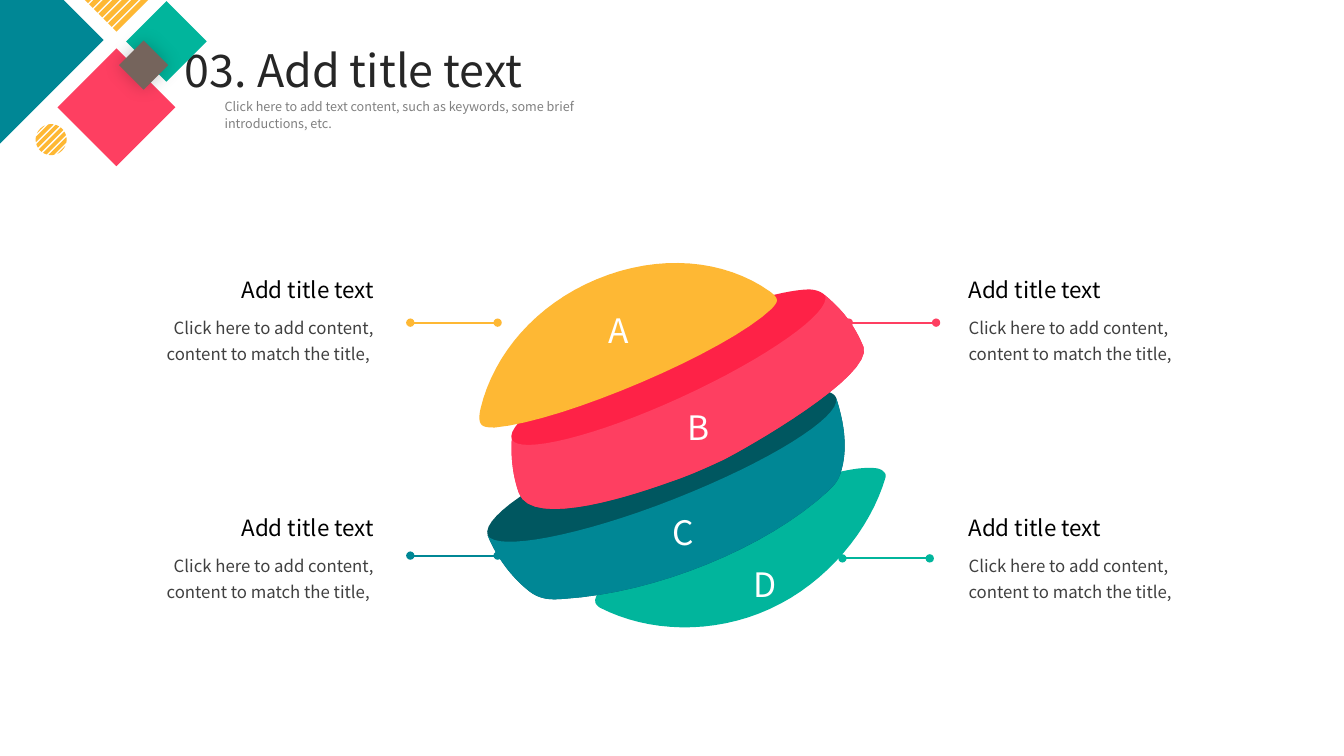
from math import sqrt

from lxml.etree import SubElement
from pptx import Presentation
from pptx.dml.color import RGBColor
from pptx.enum.shapes import MSO_CONNECTOR as Connector, MSO_SHAPE as Shape
from pptx.enum.text import MSO_ANCHOR as Anchor, MSO_AUTO_SIZE as AutoSize, PP_ALIGN as Align
from pptx.oxml.ns import qn
from pptx.util import Cm, Pt

FONT = "Noto Sans CJK SC"
COLORS = {
    "yellow": "FEB834", "pink": "FE3F61", "red": "FE2247", "teal": "008795",
    "deep_teal": "005760", "green": "01B59C", "brown": "75645C", "white": "FFFFFF",
    "black": "000000", "heading": "262626", "body": "404040", "muted": "808080",
}

# Globe outlines on a grid 406 units wide: each curve is two handles and an end point
GLOBE_UNITS = 406
CAP_START = (119, 26)
CAP = [
    ((59, 51), (17, 100), (4, 154)), ((0, 172), (6, 173), (18, 173)),
    ((86, 167), (248, 98), (293, 55)), ((298, 49), (302, 46), (291, 38)),
    ((246, 6), (181, 0), (119, 26)),
]
UPPER_START = (35, 185)
UPPER_WALL = [
    ((34, 203), (36, 221), (42, 238)), ((55, 275), (164, 237), (192, 227)),
    ((210, 221), (228, 213), (245, 205)), ((267, 194), (394, 122), (384, 93)),
    ((375, 72), (365, 58), (346, 42)),
]
UPPER_FRONT = [((352, 59), (288, 104), (203, 143)), ((118, 182), (43, 200), (35, 185))]
UPPER_BACK = [
    ((342, 38), (336, 36), (329, 36)), ((301, 37), (242, 54), (178, 84)),
    ((92, 123), (28, 168), (35, 185)),
]
LOWER_START = (11, 280)
LOWER_WALL = [
    ((20, 302), (35, 322), (53, 336)), ((64, 344), (74, 344), (87, 343)),
    ((178, 337), (287, 293), (349, 236)), ((355, 230), (358, 227), (361, 219)),
    ((369, 195), (365, 169), (357, 144)),
]
LOWER_FRONT = [((361, 163), (290, 207), (196, 244)), ((102, 281), (20, 296), (11, 280))]
LOWER_BACK = [
    ((355, 138), (345, 135), (330, 135)), ((297, 137), (237, 152), (172, 178)),
    ((76, 215), (4, 260), (11, 280)),
]
BOWL_START = (389, 213)
BOWL = [
    ((363, 213), (309, 230), (250, 256)), ((171, 292), (112, 333), (118, 347)),
    ((119, 349), (121, 351), (123, 352)), ((170, 376), (234, 379), (291, 353)),
    ((348, 327), (391, 274), (406, 222)), ((406, 220), (406, 219), (405, 218)),
    ((402, 214), (398, 213), (389, 213)),
]
SLICES = [
    (BOWL_START, BOWL, "green"),
    (LOWER_START, LOWER_WALL + LOWER_BACK, "deep_teal"),
    (LOWER_START, LOWER_WALL + LOWER_FRONT, "teal"),
    (UPPER_START, UPPER_WALL + UPPER_BACK, "red"),
    (UPPER_START, UPPER_WALL + UPPER_FRONT, "pink"),
    (CAP_START, CAP, "yellow"),
]
LETTERS = [("A", 141, 76), ("B", 220, 173), ("C", 205, 277), ("D", 286, 328)]


def rgb(color):
    return RGBColor.from_string(COLORS[color])


def paint(part, color):
    part.shadow.inherit = False
    part.fill.solid()
    part.fill.fore_color.rgb = rgb(color)
    part.line.fill.background()


def write(holder, text, size, color, align=Align.LEFT, spacing=None, wrap=True, anchor=Anchor.TOP):
    frame = holder.text_frame
    frame.word_wrap = wrap
    frame.auto_size = AutoSize.NONE
    frame.vertical_anchor = anchor
    paragraph = frame.paragraphs[0]
    paragraph.alignment = align
    if spacing:
        paragraph.line_spacing = spacing
    run = paragraph.add_run()
    run.text = text
    run.font.name = FONT
    run.font.size = Pt(size)
    run.font.color.rgb = rgb(color)


def sample(start, curves, steps=16):
    """Points along a chain of cubic curves."""
    points = [start]
    for first, second, end in curves:
        origin = points[-1]
        for step in range(1, steps + 1):
            t = step / steps
            s = 1 - t
            points.append(tuple(
                s**3 * a + 3 * s * s * t * b + 3 * s * t * t * c + t**3 * d
                for a, b, c, d in zip(origin, first, second, end)))
    return points


def add_outline(slide, contours, color):
    builder = slide.shapes.build_freeform(*contours[0][0])
    for number, contour in enumerate(contours):
        if number:
            builder.move_to(*contour[0])
        builder.add_line_segments(contour[1:], close=True)
    paint(builder.convert_to_shape(), color)


def add_striped_dot(slide, center_x, center_y, radius):
    pitch, half_width, steps = Cm(0.137), Cm(0.047), 6
    contours = []
    for index in range(-3, 4):
        near = max(index * pitch - half_width, -radius)
        far = min(index * pitch + half_width, radius)
        across = [near + (far - near) * step / steps for step in range(steps + 1)]
        edge = [(u, sqrt(max(radius**2 - u**2, 0))) for u in across]
        edge += [(u, -v) for u, v in reversed(edge)]
        contours.append([(center_x + (u + v) / sqrt(2), center_y + (u - v) / sqrt(2))
                         for u, v in edge])
    add_outline(slide, contours, "yellow")


def add_corner(slide, left, top):
    def diamond(x, y, size, color):
        tile = slide.shapes.add_shape(Shape.DIAMOND, left + Cm(x), top + Cm(y), Cm(size), Cm(size))
        paint(tile, color)
        return tile

    diamond(-2.67, -1.63, 5.28, "teal")
    diamond(1.45, 1.22, 2.97, "pink")
    # Slanted stripes
    for index in range(7):
        shift = Cm(0.12) * index
        stripe = slide.shapes.add_shape(
            Shape.RECTANGLE, left + Cm(2.51) + shift, top - Cm(0.94) + shift, Cm(0.13), Cm(1.14))
        stripe.rotation = 45
        paint(stripe, "yellow")
    diamond(3.18, 0.03, 2.03, "green")
    # Overlapping tile with a soft glow of shadow
    overlap = diamond(3, 1.02, 1.24, "brown")
    effects = overlap._element.spPr.find(qn("a:effectLst"))
    shadow = SubElement(effects, qn("a:outerShdw"), blurRad=str(Pt(13)), dist="0", dir="0")
    shade = SubElement(shadow, qn("a:srgbClr"), val=COLORS["black"])
    SubElement(shade, qn("a:alpha"), val="21000")
    add_striped_dot(slide, left + Cm(1.29), top + Cm(3.52), Cm(0.39))


def add_heading(slide, left, top):
    heading = slide.shapes.title
    heading.left, heading.top, heading.width, heading.height = left, top, Cm(9.55), Cm(1.63)
    write(heading, "03. Add title text", 32, "heading", Align.CENTER, wrap=False,
          anchor=Anchor.MIDDLE)
    intro = slide.shapes.add_textbox(left + Cm(1.27), top + Cm(1.37), Cm(9.4), Cm(1.14))
    write(intro, "Click here to add text content, such as keywords, some brief introductions, etc.",
          9, "muted", spacing=1.14)


def add_globe(slide, left, top, width):
    unit = width / GLOBE_UNITS
    for start, curves, color in SLICES:
        outline = [(left + x * unit, top + y * unit) for x, y in sample(start, curves)]
        add_outline(slide, [outline], color)
    box_width, box_height = Cm(1.1), Cm(1.27)
    for letter, x, y in LETTERS:
        label = slide.shapes.add_textbox(
            int(left + x * unit - box_width / 2), int(top + y * unit - box_height / 2),
            box_width, box_height)
        write(label, letter, 24, "white", Align.CENTER, wrap=False, anchor=Anchor.MIDDLE)


def add_leader(slide, left, y, color):
    leader = slide.shapes.add_connector(Connector.STRAIGHT, left, y, left + Cm(2.2), y)
    leader.line.color.rgb = rgb(color)
    leader.line.width = Pt(1.5)
    line = leader.line._get_or_add_ln()
    for end in ("a:headEnd", "a:tailEnd"):
        SubElement(line, qn(end), type="oval")
    SubElement(leader._element.spPr, qn("a:effectLst"))


def add_caption(slide, left, top, align):
    width = Cm(6.27)
    title = slide.shapes.add_textbox(left, top, width, Cm(0.94))
    write(title, "Add title text", 16, "black", align)
    detail = slide.shapes.add_textbox(left, top + Cm(0.89), width, Cm(1.52))
    ending = " " if align == Align.RIGHT else ""
    write(detail, "Click here to add content, content to match the title," + ending,
          12, "body", align, spacing=1.3)


def main():
    deck = Presentation()
    deck.slide_width, deck.slide_height = Cm(33.87), Cm(19.05)
    slide = deck.slides.add_slide(deck.slide_layouts[5])
    add_globe(slide, Cm(12.01), Cm(6.38), Cm(10.31))
    for x, y, color in [(10.34, 8.13, "yellow"), (21.39, 8.13, "pink"),
                        (10.34, 14, "teal"), (21.23, 14.07, "green")]:
        add_leader(slide, Cm(x), Cm(y), color)
    add_corner(slide, Cm(0), Cm(0))
    add_heading(slide, Cm(4.14), Cm(0.94))
    for top in (6.83, 12.83):
        add_caption(slide, Cm(3.4), Cm(top), Align.RIGHT)
        add_caption(slide, Cm(24.16), Cm(top), Align.LEFT)
    deck.save("out.pptx")


if __name__ == "__main__":
    main()
